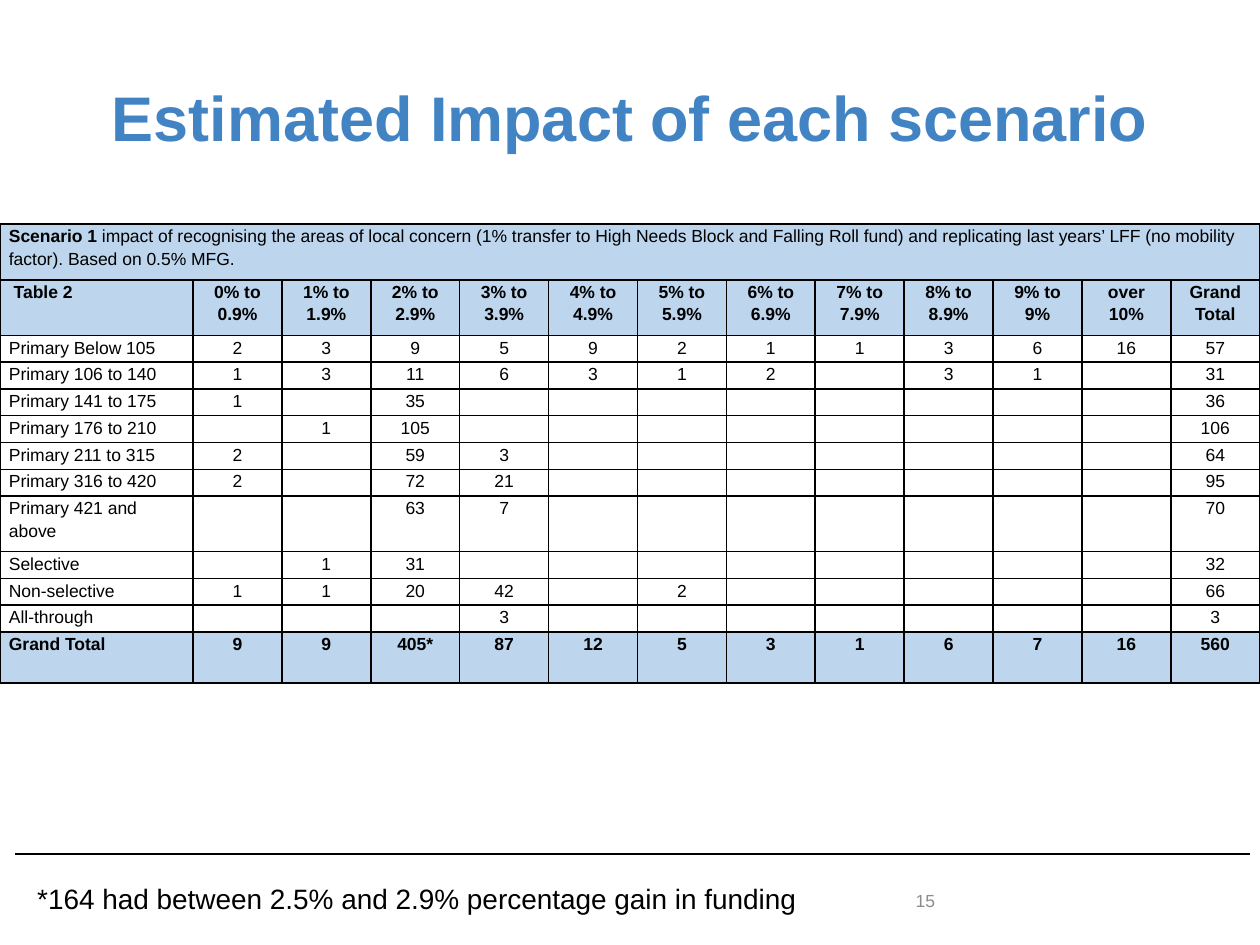
from lxml import etree
from pptx import Presentation
from pptx.dml.color import RGBColor
from pptx.enum.shapes import MSO_CONNECTOR
from pptx.enum.text import MSO_ANCHOR, PP_ALIGN
from pptx.oxml.ns import qn
from pptx.util import Cm, Pt

LEFT, CENTER = PP_ALIGN.LEFT, PP_ALIGN.CENTER
TOP, MIDDLE = MSO_ANCHOR.TOP, MSO_ANCHOR.MIDDLE
STRAIGHT = MSO_CONNECTOR.STRAIGHT

BLACK = RGBColor(0x00, 0x00, 0x00)
GREY = RGBColor(0x8C, 0x8C, 0x8C)
TITLE_BLUE = RGBColor(0x42, 0x83, 0xC4)
BAND_BLUE = RGBColor(0xBD, 0xD6, 0xEE)
FONT = "Arial"

# Content
TITLE = "Estimated Impact of each scenario"
FOOTNOTE = "*164 had between 2.5% and 2.9% percentage gain in funding"
PAGE = "15"
CAPTION = [
    ("Scenario 1", True),
    (" impact of recognising the areas of local concern (1% transfer to High "
     "Needs Block and Falling Roll fund) and replicating last years’ LFF "
     "(no mobility factor). Based on 0.5% MFG.", False),
]
HEADER = [" Table 2", "0% to 0.9%", "1% to 1.9%", "2% to 2.9%", "3% to 3.9%",
          "4% to 4.9%", "5% to 5.9%", "6% to 6.9%", "7% to 7.9%",
          "8% to 8.9%", "9% to 9%", "over 10%", "Grand Total"]
# Counts by column number; columns not listed are empty
SCHOOLS = [
    ("Primary Below 105", {1: 2, 2: 3, 3: 9, 4: 5, 5: 9, 6: 2, 7: 1, 8: 1,
                           9: 3, 10: 6, 11: 16, 12: 57}),
    ("Primary 106 to 140", {1: 1, 2: 3, 3: 11, 4: 6, 5: 3, 6: 1, 7: 2,
                            9: 3, 10: 1, 12: 31}),
    ("Primary 141 to 175", {1: 1, 3: 35, 12: 36}),
    ("Primary 176 to 210", {2: 1, 3: 105, 12: 106}),
    ("Primary 211 to 315", {1: 2, 3: 59, 4: 3, 12: 64}),
    ("Primary 316 to 420", {1: 2, 3: 72, 4: 21, 12: 95}),
    ("Primary 421 and above", {3: 63, 4: 7, 12: 70}),
    ("Selective", {2: 1, 3: 31, 12: 32}),
    ("Non-selective", {1: 1, 2: 1, 3: 20, 4: 42, 6: 2, 12: 66}),
    ("All-through", {4: 3, 12: 3}),
]
TOTALS = ["Grand Total", "9", "9", "405*", "87", "12", "5", "3", "1", "6",
          "7", "16", "560"]

# Table measures in cm
SLIDE_W, SLIDE_H = 25.4, 19.05
LABEL_W = 3.89
ONE_LINE, TWO_LINES, TOTAL_H = 0.54, 1.12, 1.03
TABLE_TOP = 4.52


def add_run(p, text, size, color=BLACK, bold=False):
    r = p.add_run()
    r.text = text
    r.font.name = FONT
    r.font.size = Pt(size)
    r.font.bold = bold
    r.font.color.rgb = color


def add_text(s, box, text, size, color=BLACK, bold=False, align=LEFT, anchor=TOP):
    tf = s.shapes.add_textbox(*map(Cm, box)).text_frame
    tf.word_wrap = True
    tf.vertical_anchor = anchor
    p = tf.paragraphs[0]
    p.alignment = align
    add_run(p, text, size, color, bold)


def add_borders(cell):
    tc_pr = cell._tc.get_or_add_tcPr()
    for i, side in enumerate(("a:lnL", "a:lnR", "a:lnT", "a:lnB")):
        ln = etree.Element(qn(side), w=str(Pt(1)))
        fill = etree.SubElement(ln, qn("a:solidFill"))
        etree.SubElement(fill, qn("a:srgbClr"), val=str(BLACK))
        tc_pr.insert(i, ln)


def fill_cell(cell, runs, align, shaded):
    cell.margin_left = cell.margin_right = Cm(0.18)
    cell.margin_top = cell.margin_bottom = 0
    if shaded:
        cell.fill.solid()
        cell.fill.fore_color.rgb = BAND_BLUE
    else:
        cell.fill.background()
    add_borders(cell)
    p = cell.text_frame.paragraphs[0]
    p.alignment = align
    p.line_spacing = 1.15
    p.space_after = Pt(10)
    for text, bold in runs:
        add_run(p, text, 10, BLACK, bold)
    if not runs:  # keeps empty cells as low as the filled ones
        etree.SubElement(p._p, qn("a:endParaRPr"), sz="1000")


def add_impact_table(s):
    columns = range(len(HEADER))
    body = [[label] + [str(counts.get(c, "")) for c in columns[1:]]
            for label, counts in SCHOOLS]
    rows = [HEADER] + body + [TOTALS]
    two_line_labels = ("Primary 421 and above", HEADER[0])
    heights = [TWO_LINES] + [TWO_LINES if row[0] in two_line_labels else ONE_LINE
                             for row in rows[:-1]] + [TOTAL_H]

    frame = s.shapes.add_table(len(heights), len(columns), 0, Cm(TABLE_TOP),
                               Cm(SLIDE_W), Cm(sum(heights)))
    table = frame.table
    table.first_row = table.horz_banding = False
    for c in columns:
        table.columns[c].width = Cm((SLIDE_W - LABEL_W) / 12 if c else LABEL_W)
    for row, height in zip(table.rows, heights):
        row.height = Cm(height)

    # Caption across the full width
    table.cell(0, 0).merge(table.cell(0, columns[-1]))
    for c in columns:
        fill_cell(table.cell(0, c), [] if c else CAPTION, LEFT, True)

    # Header, school groups and totals
    for r, values in enumerate(rows, start=1):
        strong = values in (HEADER, TOTALS)
        for c, text in enumerate(values):
            runs = [(text, strong)] if text else []
            fill_cell(table.cell(r, c), runs, CENTER if c else LEFT, strong)


def main():
    prs = Presentation()
    prs.slide_width, prs.slide_height = Cm(SLIDE_W), Cm(SLIDE_H)
    s = prs.slides.add_slide(prs.slide_layouts[6])

    # Footer rule and page number
    rule = s.shapes.add_connector(STRAIGHT, Cm(0.3), Cm(17.22), Cm(25.2), Cm(17.22))
    rule.line.color.rgb = BLACK
    rule.line.width = Pt(1)
    etree.SubElement(rule._element.spPr, qn("a:effectLst"))
    add_text(s, (18.21, 17.65, 5.92, 1.02), PAGE, 10, GREY, anchor=MIDDLE)

    add_impact_table(s)

    # Footnote and title
    add_text(s, (0.5, 17.65, 16.61, 0.94), FOOTNOTE, 16)
    add_text(s, (1.27, 0.76, 22.86, 3.18), TITLE, 36, TITLE_BLUE, True, CENTER, MIDDLE)
    prs.save("out.pptx")


if __name__ == "__main__":
    main()
